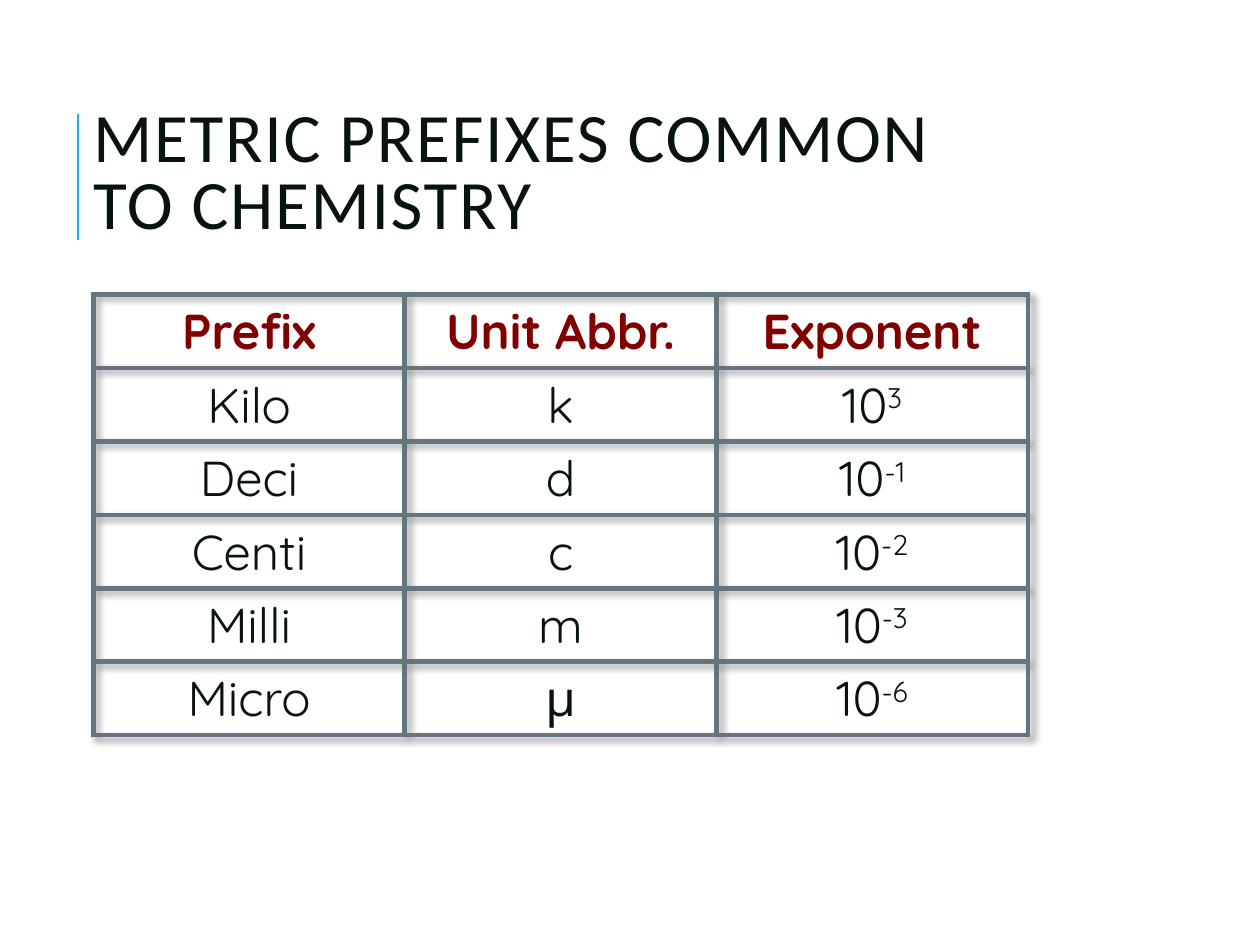
from lxml import etree
from pptx import Presentation
from pptx.dml.color import RGBColor
from pptx.enum.shapes import MSO_CONNECTOR
from pptx.enum.text import MSO_ANCHOR, PP_ALIGN
from pptx.oxml import parse_xml
from pptx.oxml.ns import qn
from pptx.util import Cm, Pt

STRAIGHT = MSO_CONNECTOR.STRAIGHT
MIDDLE = MSO_ANCHOR.MIDDLE
CENTER = PP_ALIGN.CENTER
NS = "http://schemas.openxmlformats.org/drawingml/2006/main"
NO_STYLE = "{2D5ABB26-0587-4C30-8999-92F81FD0307C}"
COLORS = {"text": "07130F", "header": "800000", "accent": "1CADE4", "border": "65757D"}
ROWS = [
    ("Prefix", "Unit Abbr.", "Exponent", ""),
    ("Kilo", "k", "10", "3"),
    ("Deci", "d", "10", "-1"),
    ("Centi", "c", "10", "-2"),
    ("Milli", "m", "10", "-3"),
    ("Micro", "μ", "10", "-6"),
]


def add_run(p, text, font, size, color, bold=False):
    r = p.add_run()
    r.text = text
    r.font.name = font
    r.font.size = Pt(size)
    r.font.bold = bold
    r.font.color.rgb = RGBColor.from_string(COLORS[color])
    return r


def add_borders(cell):
    tc_pr = cell._tc.get_or_add_tcPr()
    for side in ("lnL", "lnR", "lnT", "lnB"):
        tc_pr.append(parse_xml(
            f'<a:{side} xmlns:a="{NS}" w="{Pt(3)}"><a:solidFill>'
            f'<a:srgbClr val="{COLORS["border"]}"/></a:solidFill></a:{side}>'))


prs = Presentation()
prs.slide_width, prs.slide_height = Cm(25.4), Cm(19.05)
slide = prs.slides.add_slide(prs.slide_layouts[6])

line = slide.shapes.add_connector(STRAIGHT, Cm(1.57), Cm(4.83), Cm(1.57), Cm(2.29))
line.line.color.rgb = RGBColor.from_string(COLORS["accent"])
line.line.width = Pt(1.5)
etree.SubElement(line._element.spPr, qn("a:effectLst"))

title = slide.shapes.add_textbox(Cm(1.63), Cm(1.96), Cm(19.33), Cm(3.18))
tf = title.text_frame
tf.word_wrap = True
tf.vertical_anchor = MIDDLE
tf.margin_right = Cm(0.6)
p = tf.paragraphs[0]
p.line_spacing = 0.8
r = add_run(p, "METRIC PREFIXES COMMON TO CHEMISTRY", "Calibri", 39.6, "text")
r.font._element.set("spc", "100")

frame = slide.shapes.add_table(len(ROWS), 3, Cm(1.88), Cm(5.94), Cm(18.84), Cm(8.92))
table = frame.table
table.first_row = table.horz_banding = False
tbl_pr = table._tbl.tblPr
tbl_pr.find(qn("a:tableStyleId")).text = NO_STYLE
tbl_pr.insert(0, parse_xml(
    f'<a:effectLst xmlns:a="{NS}"><a:outerShdw blurRad="50800" dist="38100" dir="2700000">'
    '<a:srgbClr val="000000"><a:alpha val="40000"/></a:srgbClr></a:outerShdw></a:effectLst>'))

for i, (*texts, power) in enumerate(ROWS):
    table.rows[i].height = Cm(1.48)
    color = "text" if i else "header"
    for j, text in enumerate(texts):
        cell = table.cell(i, j)
        add_borders(cell)
        cell.fill.background()
        p = cell.text_frame.paragraphs[0]
        p.alignment = CENTER
        add_run(p, text, "Quicksand", 28, color, i == 0)
        if j == 2 and power:
            r = add_run(p, power, "Quicksand", 28, color)
            r.font._element.set("baseline", "30000")

prs.save("out.pptx")
